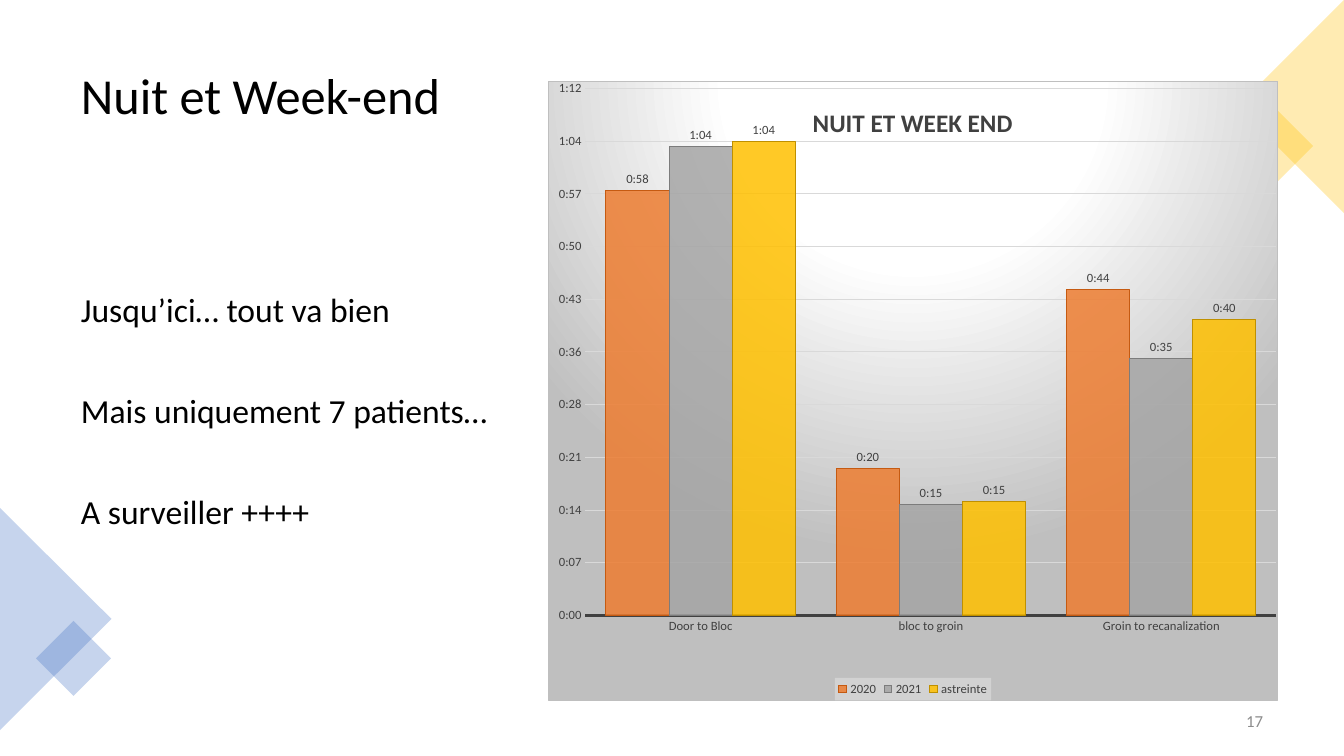
from lxml import etree
from pptx import Presentation
from pptx import util as u
from pptx.chart import data
from pptx.dml.color import RGBColor
from pptx.enum import chart as ch
from pptx.enum import shapes, text
from pptx.oxml import ns, parse_xml

SCALE = 914400 / 100.8
FONT = "Calibri"
BLACK = RGBColor(0, 0, 0)
DARK = RGBColor(0x40, 0x40, 0x40)
GREY = RGBColor(0x8C, 0x8C, 0x8C)
GRID = RGBColor(0xD9, 0xD9, 0xD9)
BLUE = RGBColor(0x44, 0x72, 0xC4)
GOLD = RGBColor(0xFF, 0xC0, 0x00)
ORANGE = RGBColor(0xED, 0x7D, 0x31)
SILVER = RGBColor(0xA5, 0xA5, 0xA5)
RUST = RGBColor(0xC5, 0x5A, 0x11)
STEEL = RGBColor(0x7C, 0x7C, 0x7C)
BRONZE = RGBColor(0xBF, 0x90, 0x00)

TRI = shapes.MSO_SHAPE.ISOSCELES_TRIANGLE
RECT = shapes.MSO_SHAPE.RECTANGLE
DECOR = [
    (TRI, (-56, 563, 223, 112), 90, BLUE),
    (RECT, (47, 632, 53, 53), 45, BLUE),
    (RECT, (1248, 119, 54, 54), 45, GOLD),
    (TRI, (1184, 53, 214, 107), 270, GOLD),
]

AREA = (548, 81, 730, 620)
STAGES = ["Door to Bloc", "bloc to groin", "Groin to recanalization"]
# Name, delay per stage as a share of a day, fill, line
SERIES = [
    ("2020", (0.0403, 0.0139, 0.0309), ORANGE, RUST),
    ("2021", (0.0445, 0.0105, 0.0244), SILVER, STEEL),
    ("astreinte", (0.045, 0.0108, 0.0281), GOLD, BRONZE),
]
CLOCK = "h:mm"

NS = f'xmlns:c="{ns.nsuri("c")}" xmlns:a="{ns.nsuri("a")}"'
BACK = f"""<c:spPr {NS}><a:gradFill><a:gsLst>
<a:gs pos="0"><a:srgbClr val="FFFFFF"/></a:gs>
<a:gs pos="39000"><a:srgbClr val="FFFFFF"/></a:gs>
<a:gs pos="100000"><a:srgbClr val="BFBFBF"/></a:gs></a:gsLst>
<a:path path="circle"><a:fillToRect l="50000" t="-80000" r="50000" b="180000"/></a:path>
</a:gradFill><a:ln w="9525"><a:solidFill><a:srgbClr val="BFBFBF"/></a:solidFill></a:ln></c:spPr>"""
PANEL = f"""<c:spPr {NS}><a:solidFill><a:srgbClr val="F2F2F2"><a:alpha val="39000"/></a:srgbClr>
</a:solidFill><a:ln><a:noFill/></a:ln></c:spPr>"""


def px(n):
    return u.Emu(round(n * SCALE))


def box(at):
    return [px(n) for n in at]


def style(obj, **vals):
    for key, val in vals.items():
        setattr(obj, key, val)


def type_set(font, size, color, bold=False):
    style(font, name=FONT, size=u.Pt(size), bold=bold)
    font.color.rgb = color


def fade(nodes, pct):
    """Give each colour node an opacity in percent."""
    for node in nodes:
        etree.SubElement(node, ns.qn("a:alpha")).set("val", str(pct * 1000))


def add_text(slide, at, lines, size, color, anchor, **form):
    frame = slide.shapes.add_textbox(*box(at)).text_frame
    style(frame, word_wrap=True, vertical_anchor=anchor)
    frame.text = "\n".join(lines)
    for i, para in enumerate(frame.paragraphs):
        style(para, **form)
        if i == 0:
            para.space_before = u.Pt(0)
        type_set(para.font, size, color)


def add_decor(slide, kind, at, turn, color):
    shape = slide.shapes.add_shape(kind, *box(at))
    shape.rotation = turn
    shape.shadow.inherit = False
    shape.fill.solid()
    shape.fill.fore_color.rgb = color
    shape.line.fill.background()
    fade(shape.element.xpath("./p:spPr/a:solidFill/a:srgbClr"), 30)


def place(node, index, inner=False, **spots):
    """Set a manual layout on a chart part, in px from the chart's corner."""
    for old in node.findall(ns.qn("c:layout")):
        node.remove(old)
    wide, high = AREA[2:]
    tags = [("layoutTarget", "inner")] if inner else []
    tags += [(f"{key}Mode", "edge") for key in ("x", "y")]
    tags += [(key, val / (wide if key in "xw" else high))
             for key, val in spots.items()]
    body = "".join(f'<c:{key} val="{val}"/>' for key, val in tags)
    node.insert(index, parse_xml(
        f"<c:layout {NS}><c:manualLayout>{body}</c:manualLayout></c:layout>"))


def set_axes(chart):
    for axis in (chart.category_axis, chart.value_axis):
        style(axis, major_tick_mark=ch.XL_TICK_MARK.NONE,
              minor_tick_mark=ch.XL_TICK_MARK.NONE)
        type_set(axis.tick_labels.font, 9, DARK)
    line = chart.category_axis.format.line
    line.color.rgb, line.width = DARK, u.Pt(1.5)
    axis = chart.value_axis
    style(axis, minimum_scale=0, maximum_scale=0.05, major_unit=0.005)
    style(axis.tick_labels, number_format=CLOCK, number_format_is_linked=False)
    axis.format.line.fill.background()
    line = axis.major_gridlines.format.line
    line.color.rgb, line.width = GRID, u.Pt(0.75)


def set_bars(chart):
    plot = chart.plots[0]
    style(plot, gap_width=65, overlap=0, vary_by_categories=False)
    for bars, (_, _, fill, edge) in zip(plot.series, SERIES):
        bars.format.fill.solid()
        bars.format.fill.fore_color.rgb = fill
        line = bars.format.line
        line.color.rgb, line.width = edge, u.Pt(0.75)
        labels = bars.data_labels
        style(labels, show_value=True, number_format=CLOCK,
              number_format_is_linked=False,
              position=ch.XL_LABEL_POSITION.OUTSIDE_END)
        type_set(labels.font, 9, DARK)
    fade(chart.element.xpath(".//c:ser/c:spPr/a:solidFill/a:srgbClr"), 85)


def set_title(chart, words):
    chart.has_title = True
    frame = chart.chart_title.text_frame
    frame.text = words
    type_set(frame.paragraphs[0].runs[0].font, 18, DARK, bold=True)
    node = chart.element.xpath("./c:chart/c:title")[0]
    place(node, 1, x=260, y=19)
    for flag in node.findall(ns.qn("c:overlay")):
        flag.set("val", "1")


def set_legend(chart):
    chart.has_legend = True
    legend = chart.legend
    style(legend, position=ch.XL_LEGEND_POSITION.BOTTOM, include_in_layout=False)
    type_set(legend.font, 9, DARK)
    node = chart.element.xpath("./c:chart/c:legend/c:txPr")[0]
    node.addprevious(parse_xml(PANEL))


def add_delays(slide):
    table = data.CategoryChartData(number_format=CLOCK)
    table.categories = STAGES
    for name, vals, _, _ in SERIES:
        table.add_series(name, vals)
    kind = ch.XL_CHART_TYPE.COLUMN_CLUSTERED
    chart = slide.shapes.add_chart(kind, *box(AREA), table).chart
    type_set(chart.font, 10, BLACK)
    set_axes(chart)
    set_bars(chart)
    set_title(chart, "NUIT ET WEEK END")
    set_legend(chart)
    root = chart.element
    place(root.xpath("./c:chart/c:plotArea")[0], 0, inner=True,
          x=37, y=7, w=692, h=528)
    root.xpath("./c:chart")[0].addnext(parse_xml(BACK))


def main():
    deck = Presentation()
    style(deck, slide_width=px(1344), slide_height=px(756))
    slide = deck.slides.add_slide(deck.slide_layouts[6])
    mid, top = text.MSO_ANCHOR.MIDDLE, text.MSO_ANCHOR.TOP
    add_text(slide, (71, 36, 1203, 125), ["Nuit et Week-end"], 36, BLACK, mid,
             line_spacing=0.9)
    points = ["Jusqu’ici… tout va bien", "Mais uniquement 7 patients…",
              "A surveiller ++++"]
    add_text(slide, (71, 289, 442, 393), points, 24, BLACK, top,
             line_spacing=0.9, space_before=u.Pt(46))
    for item in DECOR:
        add_decor(slide, *item)
    add_text(slide, (971, 701, 302, 40), ["17"], 12, GREY, mid,
             alignment=text.PP_ALIGN.RIGHT)
    add_delays(slide)
    deck.save("out.pptx")


if __name__ == "__main__":
    main()
